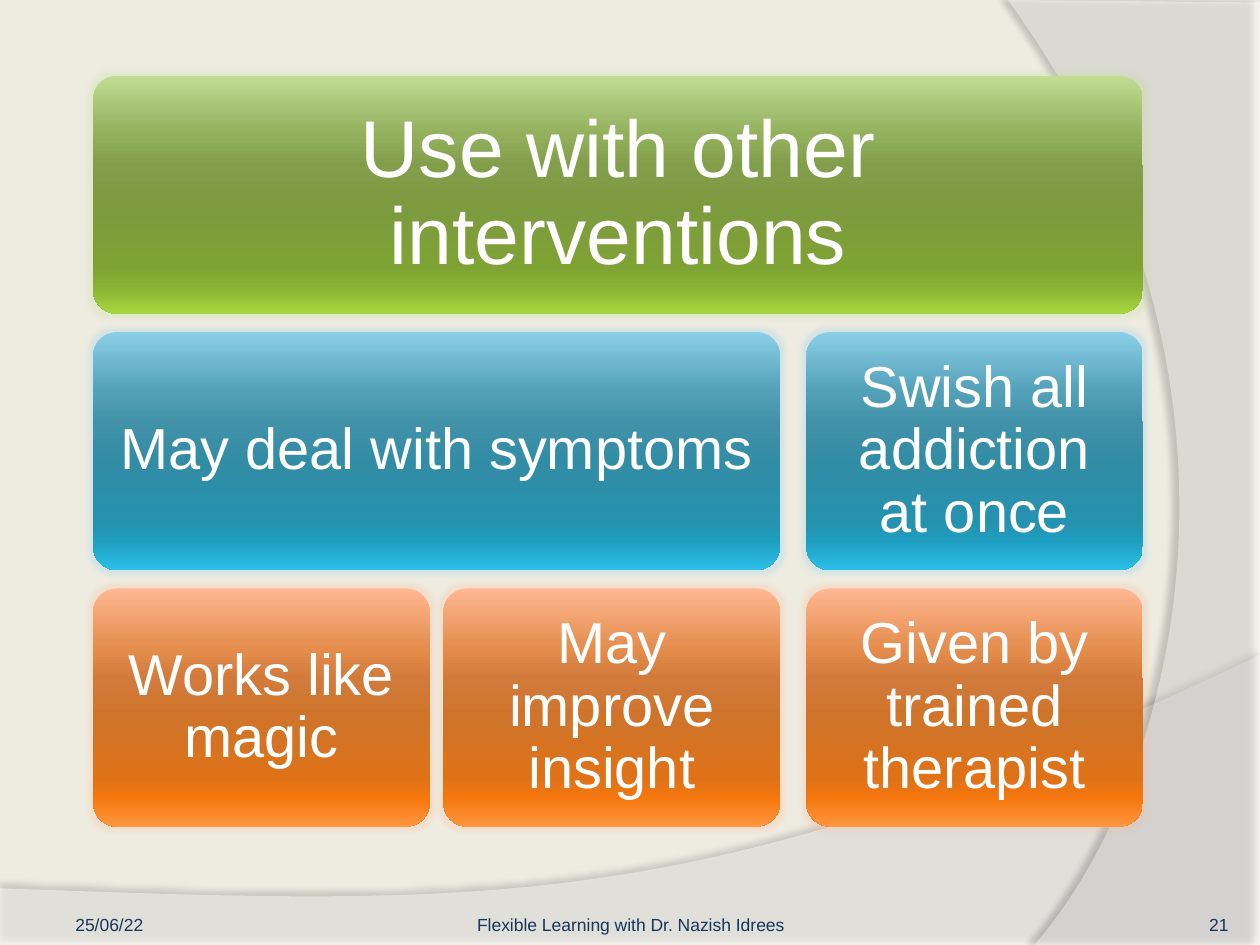
import pptx
import pptx.dml.color
import pptx.enum.shapes
import pptx.enum.text
import pptx.oxml
import pptx.oxml.ns
import pptx.util

Inches, Pt = pptx.util.Inches, pptx.util.Pt
RGBColor = pptx.dml.color.RGBColor
ALIGN = pptx.enum.text.PP_ALIGN
ANCHOR = pptx.enum.text.MSO_ANCHOR
NS = pptx.oxml.ns.nsdecls("a")

CREAM = RGBColor(0xEE, 0xEC, 0xE1)
WHITE = RGBColor(0xFF, 0xFF, 0xFF)
NAVY = RGBColor(0x17, 0x36, 0x5C)

STOPS = (0, 25, 38, 55, 80, 88, 100)
GREEN, BLUE, ORANGE = (
    [RGBColor.from_string(code) for code in codes.split()]
    for codes in (
        "C0DD92 92AF5C 829E4B 7C9A3E 7EA234 87B131 A5D640",
        "8BCEE7 52A1B9 4191A8 318CA5 2592AF 1F9EC0 2CC0E8",
        "FFB893 E48D4D D17A3A CF7429 DF7217 F5770E FF9640",
    )
)

# Each tile: text, first column, last column
ROWS = [
    (GREEN, 46, 0.19, [("Use with other interventions", 0, 2)]),
    (BLUE, 33, 0.14, [("May deal with symptoms", 0, 1),
                      ("Swish all addiction at once", 2, 2)]),
    (ORANGE, 33, 0.14, [("Works like magic", 0, 0),
                        ("May improve insight", 1, 1),
                        ("Given by trained therapist", 2, 2)]),
]
COLUMN_LEFTS = (0.74, 3.52, 6.4)
COLUMN_WIDTH = 2.67
TOP, ROW_HEIGHT, ROW_GAP = 0.6, 1.89, 0.145

# Each footer: text, left, width, alignment, insets
FOOTERS = [
    ("25/06/22", 0.5, 2.33, ALIGN.LEFT, (0.1, 0.05, 0.1, 0)),
    ("21", 8.92, 0.83, ALIGN.RIGHT, (0, 0, 0, 0)),
    ("Flexible Learning with Dr. Nazish Idrees", 3.42, 3.17, ALIGN.CENTER,
     (0, 0.05, 0, 0)),
]


def bezier(start, control1, control2, end, steps=60):
    """Points along a cubic curve, both ends included."""
    points = []
    for step in range(steps + 1):
        t = step / steps
        weights = ((1 - t) ** 3, 3 * t * (1 - t) ** 2, 3 * t * t * (1 - t), t ** 3)
        points.append(tuple(
            sum(w * p[axis] for w, p in zip(weights, (start, control1, control2, end)))
            for axis in (0, 1)))
    return points


# Each swoosh: outline, opacity, shadow opacity, shadow distance, shadow direction
SWOOSHES = [
    ([(0, 7.05), (0, 7.51), (10, 7.51)]
     + bezier((10, 5.2), (5.59, 7.29), (3.91, 7.19), (0, 7.05)), 45, 35, 3.5, 270),
    ([(10, 0.02), (10, 7.5)]
     + bezier((8.21, 7.5), (9.35, 6.19), (10.18, 3), (8, 0)), 40, 45, 4, 180),
]


def add_effect(shape, xml):
    shape.shadow.inherit = False
    effects = shape._element.spPr.find(pptx.oxml.ns.qn("a:effectLst"))
    effects.append(pptx.oxml.parse_xml(xml))


def add_swoosh(slide, outline, opacity, shadow_opacity, distance, direction):
    points = [(Inches(x), Inches(y)) for x, y in outline]
    builder = slide.shapes.build_freeform(*points[0])
    builder.add_line_segments(points[1:], close=True)
    swoosh = builder.convert_to_shape()
    swoosh.fill.solid()
    swoosh.fill.fore_color.rgb = WHITE
    color = swoosh._element.spPr.find(".//" + pptx.oxml.ns.qn("a:srgbClr"))
    color.append(pptx.oxml.parse_xml(f'<a:alpha {NS} val="{opacity * 1000}"/>'))
    swoosh.line.fill.background()
    add_effect(swoosh, (
        f'<a:outerShdw {NS} blurRad="{Pt(4)}" dist="{Pt(distance)}" '
        f'dir="{direction * 60000}" algn="ctr" rotWithShape="0">'
        f'<a:srgbClr val="000000"><a:alpha val="{shadow_opacity * 1000}"/>'
        '</a:srgbClr></a:outerShdw>'))


def write_text(shape, text, *, size, color, align, anchor, insets, line_spacing=None):
    frame = shape.text_frame
    frame.word_wrap = True
    frame.vertical_anchor = anchor
    (frame.margin_left, frame.margin_top,
     frame.margin_right, frame.margin_bottom) = map(Inches, insets)
    paragraph = frame.paragraphs[0]
    paragraph.alignment = align
    if line_spacing:
        paragraph.line_spacing = line_spacing
    run = paragraph.add_run()
    run.text = text
    run.font.name = "Arial"
    run.font.size = Pt(size)
    run.font.color.rgb = color


def add_tile(slide, left, top, width, colors):
    tile = slide.shapes.add_shape(
        pptx.enum.shapes.MSO_SHAPE.ROUNDED_RECTANGLE,
        Inches(left), Inches(top), Inches(width), Inches(ROW_HEIGHT))
    tile.adjustments[0] = 0.1
    tile.fill.gradient()
    tile.fill.gradient_angle = 270
    stop_list = tile._element.spPr.find(".//" + pptx.oxml.ns.qn("a:gsLst"))
    for stop in list(stop_list):
        stop_list.remove(stop)
    for position, color in zip(STOPS, colors):
        stop_list.append(pptx.oxml.parse_xml(
            f'<a:gs {NS} pos="{position * 1000}"><a:srgbClr val="{color}"/></a:gs>'))
    tile.line.fill.background()
    add_effect(tile, (
        f'<a:glow {NS} rad="{Pt(5)}"><a:srgbClr val="{colors[0]}">'
        '<a:alpha val="25000"/></a:srgbClr></a:glow>'))
    return tile


def main():
    deck = pptx.Presentation()
    deck.slide_width, deck.slide_height = Inches(10), Inches(7.5)
    slide = deck.slides.add_slide(deck.slide_layouts[6])
    slide.background.fill.solid()
    slide.background.fill.fore_color.rgb = CREAM

    for swoosh in SWOOSHES:
        add_swoosh(slide, *swoosh)

    for text, left, width, align, insets in FOOTERS:
        footer = slide.shapes.add_textbox(
            Inches(left), Inches(7.02), Inches(width), Inches(0.4))
        write_text(footer, text, size=10, color=NAVY, align=align,
                   anchor=ANCHOR.BOTTOM, insets=insets)

    for row, (colors, size, inset, tiles) in enumerate(ROWS):
        top = TOP + row * (ROW_HEIGHT + ROW_GAP)
        for text, first, last in tiles:
            left = COLUMN_LEFTS[first]
            width = COLUMN_LEFTS[last] + COLUMN_WIDTH - left
            tile = add_tile(slide, left, top, width, colors)
            write_text(tile, text, size=size, color=WHITE, align=ALIGN.CENTER,
                       anchor=ANCHOR.MIDDLE, insets=[inset] * 4, line_spacing=0.9)

    deck.save("out.pptx")


if __name__ == "__main__":
    main()
